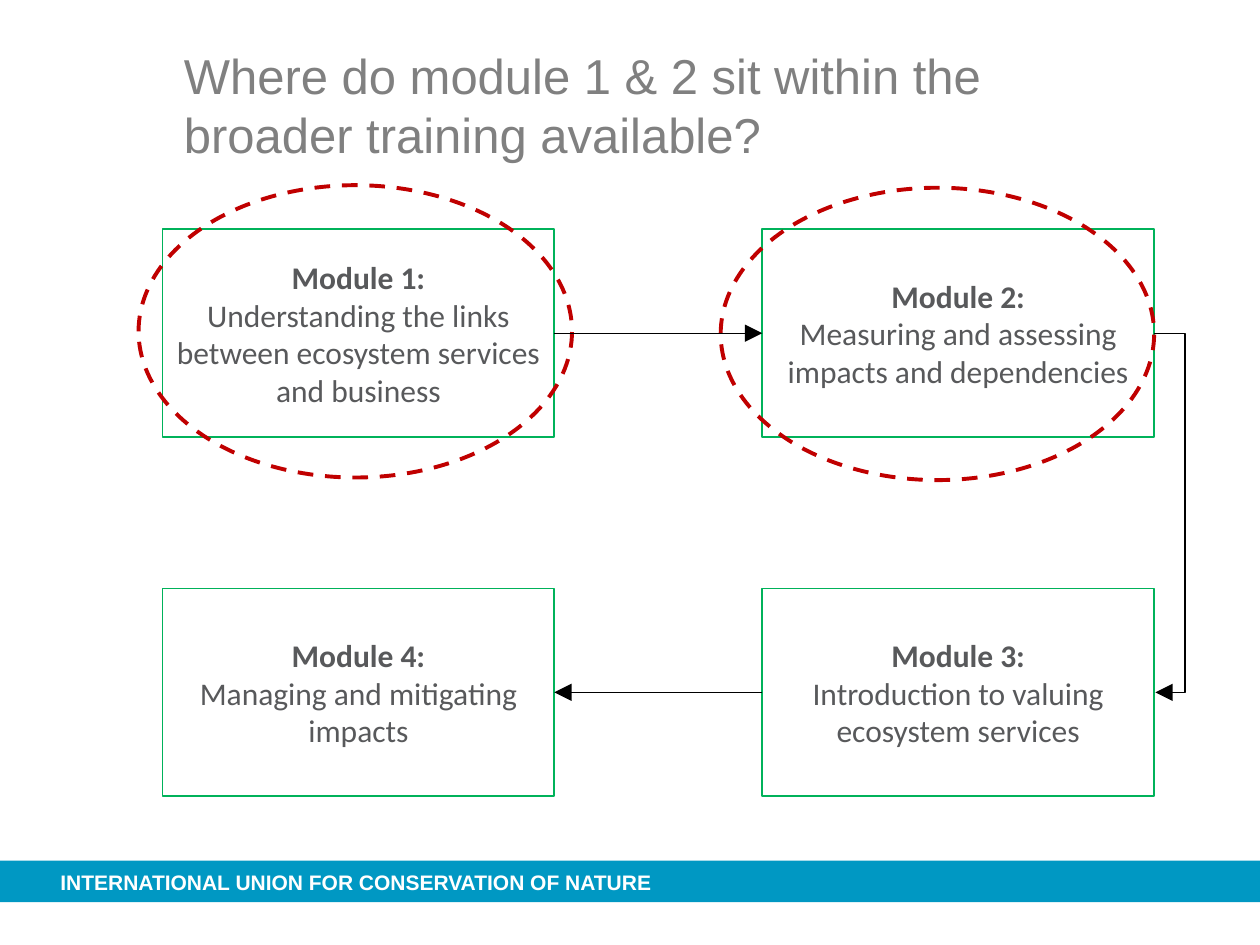
from lxml import etree
from pptx import Presentation
from pptx import util as u
from pptx.dml.color import RGBColor
from pptx.enum import dml, shapes, text
from pptx.oxml.ns import qn

COLORS = {"band": "0098C3", "white": "FFFFFF", "title": "808080", "body": "58595B",
          "box": "00B25A", "ring": "C00000", "arrow": "000000"}
COLUMNS, ROWS = 100, 75
BOX_W, BOX_H = 31.1, 16.5
RING_W, RING_H = 34.4, 23.2
LEFT, RIGHT = 12.9, 60.5
TOP, BOTTOM = 18.2, 46.7
MODULES = [
    (LEFT, TOP, "Module 1:", "Understanding the links between ecosystem services and business"),
    (RIGHT, TOP, "Module 2:", "Measuring and assessing impacts and dependencies"),
    (RIGHT, BOTTOM, "Module 3:", "Introduction to valuing ecosystem services"),
    (LEFT, BOTTOM, "Module 4:", "Managing and mitigating impacts"),
]
RINGS = [(11, 14.7), (57.2, 14.9)]
SITE_LEFT, SITE_RIGHT = 1, 3


def rgb(name):
    """Return the named colour."""
    return RGBColor.from_string(COLORS[name])


def write(p, words, size=18, font="Calibri", color="body", bold=False):
    """Add a formatted run to a paragraph."""
    r = p.add_run()
    r.text = words
    r.font.size, r.font.name, r.font.bold = u.Pt(size), font, bold
    r.font.color.rgb = rgb(color)


class Deck:
    """Hold the style and the current slide."""

    def __init__(self):
        """Start a deck with one title slide."""
        self.prs = Presentation()
        self.prs.slide_width, self.prs.slide_height = u.Inches(10), u.Inches(7.5)
        self.s = self.prs.slides.add_slide(self.prs.slide_layouts[5])

    def place(self, x, y, w, h):
        """Turn grid columns and rows into lengths."""
        col, row = self.prs.slide_width / COLUMNS, self.prs.slide_height / ROWS
        return [round(n) for n in (x * col, y * row, w * col, h * row)]

    def frame(self, sp, anchor):
        """Prepare a wrapped text frame without margins and return its paragraph."""
        tf = sp.text_frame
        tf.word_wrap, tf.vertical_anchor = True, anchor
        tf.margin_left = tf.margin_right = tf.margin_top = tf.margin_bottom = 0
        return tf.paragraphs[0]

    def title(self, words, *at):
        """Fill the title placeholder."""
        sp = self.s.shapes.title
        sp.left, sp.top, sp.width, sp.height = self.place(*at)
        p = self.frame(sp, text.MSO_ANCHOR.TOP)
        sp.text_frame.auto_size = text.MSO_AUTO_SIZE.NONE
        p.alignment = text.PP_ALIGN.LEFT
        write(p, words, size=28, font="Arial", color="title")

    def label(self, words, *at):
        """Add the footer text."""
        sp = self.s.shapes.add_textbox(*self.place(*at))
        p = self.frame(sp, text.MSO_ANCHOR.MIDDLE)
        write(p, words, size=12, font="Arial", color="white", bold=True)

    def shape(self, kind, *at, fill=None, line=None, width=1):
        """Add a preset shape."""
        sp = self.s.shapes.add_shape(kind, *self.place(*at))
        sp.shadow.inherit = False
        if fill:
            sp.fill.solid()
            sp.fill.fore_color.rgb = rgb(fill)
        else:
            sp.fill.background()
        if line:
            sp.line.color.rgb, sp.line.width = rgb(line), u.Pt(width)
        else:
            sp.line.fill.background()
        return sp

    def module(self, x, y, name, topic):
        """Add a module box with its name and topic."""
        sp = self.shape(shapes.MSO_SHAPE.RECTANGLE, x, y, BOX_W, BOX_H, fill="white", line="box")
        tf = sp.text_frame
        tf.word_wrap, tf.vertical_anchor = True, text.MSO_ANCHOR.MIDDLE
        p = tf.paragraphs[0]
        p.alignment = text.PP_ALIGN.CENTER
        write(p, name, bold=True)
        p.add_line_break()
        write(p, topic)
        return sp

    def ring(self, x, y):
        """Add a dashed highlight ring."""
        sp = self.shape(shapes.MSO_SHAPE.OVAL, x, y, RING_W, RING_H, line="ring", width=2.25)
        sp.line.dash_style = dml.MSO_LINE.DASH

    def arrow(self, start, start_site, end, end_site, bulge=None):
        """Join two boxes with an elbow arrow, bulging to the right if asked."""
        c = self.s.shapes.add_connector(shapes.MSO_CONNECTOR.ELBOW, 0, 0,
                                        self.prs.slide_width, self.prs.slide_height)
        c.begin_connect(start, start_site)
        c.end_connect(end, end_site)
        c.line.color.rgb, c.line.width = rgb("arrow"), u.Pt(0.75)
        pr = c._element.spPr
        etree.SubElement(pr.find(qn("a:ln")), qn("a:tailEnd"), type="triangle", w="lg", len="lg")
        etree.SubElement(pr, qn("a:effectLst"))
        if bulge:
            c.width = u.Inches(0.01)
            share = round(self.place(bulge, 0, 0, 0)[0] / c.width * 100000)
            guides = pr.find(qn("a:prstGeom")).get_or_add_avLst()
            etree.SubElement(guides, qn("a:gd"), name="adj1", fmla=f"val {share}")


def main():
    """Build and save the slide."""
    deck = Deck()
    deck.shape(shapes.MSO_SHAPE.RECTANGLE, 0, 68.3, COLUMNS, 3.3, fill="band")
    deck.label("INTERNATIONAL UNION FOR CONSERVATION OF NATURE", 4.8, 69, 56, 2)
    deck.title("Where do module 1 & 2 sit within the broader training available?",
               14.6, 3.6, 70.1, 8.7)
    one, two, three, four = [deck.module(*m) for m in MODULES]
    for at in RINGS:
        deck.ring(*at)
    deck.arrow(one, SITE_RIGHT, two, SITE_LEFT)
    deck.arrow(two, SITE_RIGHT, three, SITE_RIGHT, bulge=2.5)
    deck.arrow(three, SITE_LEFT, four, SITE_RIGHT)
    deck.prs.save("out.pptx")


if __name__ == "__main__":
    main()
